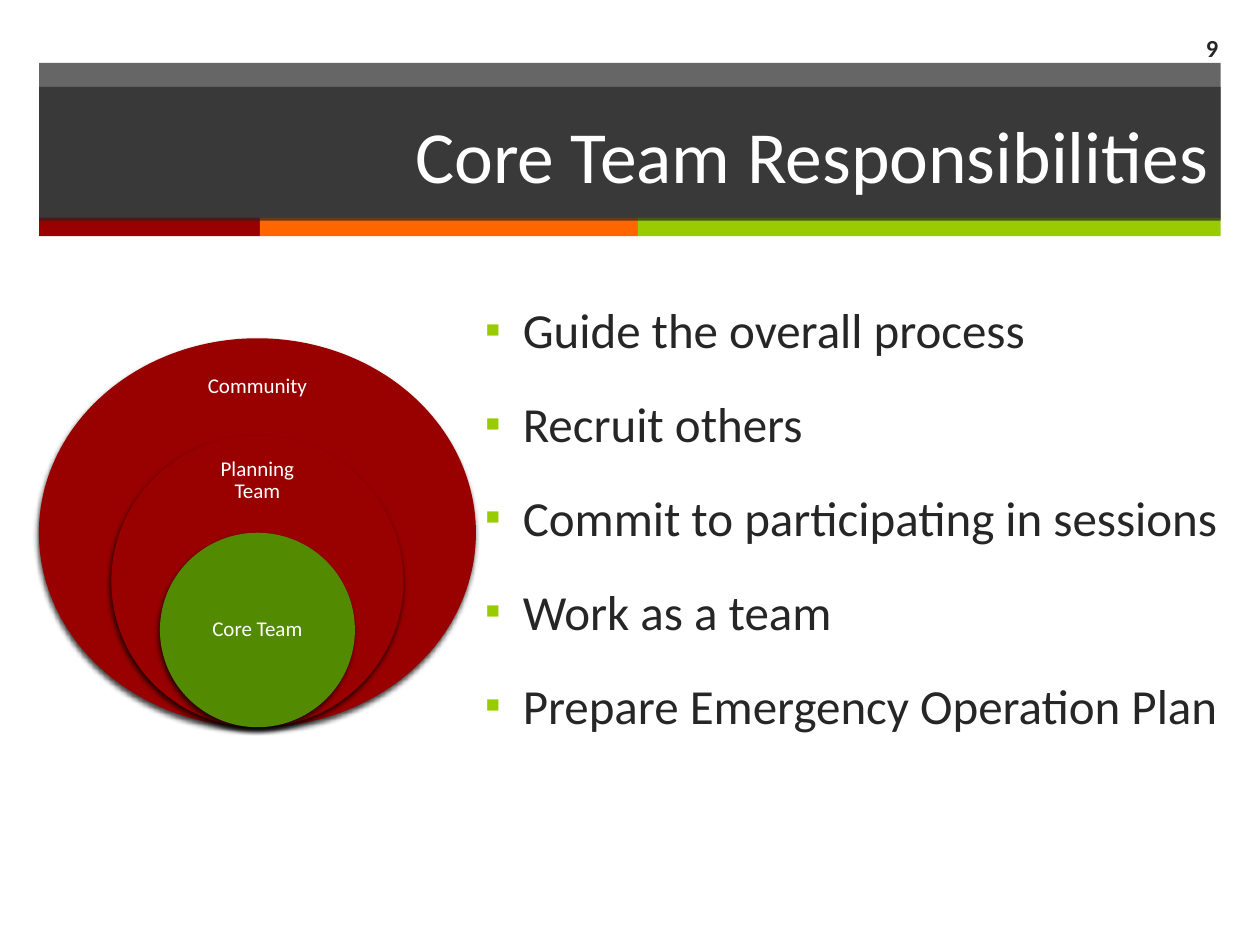
from lxml import etree
from pptx import Presentation
from pptx.dml.color import RGBColor
from pptx.enum.shapes import MSO_SHAPE
from pptx.enum.text import MSO_ANCHOR, PP_ALIGN
from pptx.oxml.ns import qn
from pptx.util import Cm, Pt

RECT, OVAL = MSO_SHAPE.RECTANGLE, MSO_SHAPE.OVAL
TOP, MID = MSO_ANCHOR.TOP, MSO_ANCHOR.MIDDLE
LEFT, MIDDLE, RIGHT = PP_ALIGN.LEFT, PP_ALIGN.CENTER, PP_ALIGN.RIGHT

DARK = RGBColor(0x26, 0x26, 0x26)
WHITE = RGBColor(0xFF, 0xFF, 0xFF)
RED = RGBColor(0x99, 0x00, 0x00)
ORANGE = RGBColor(0xFF, 0x66, 0x00)
LIME = RGBColor(0x99, 0xCC, 0x00)
GREEN = RGBColor(0x52, 0x8A, 0x02)
FONT = "Calibri"

TITLE = "Core Team Responsibilities"
NUMBER = "9"
DUTIES = [
    "Guide the overall process",
    "Recruit others",
    "Commit to participating in sessions",
    "Work as a team",
    "Prepare Emergency Operation Plan",
]
STRIPES = [(RED, 4.45), (ORANGE, 7.62), (LIME, 11.75)]
RINGS = [
    ("Community", RED, 8.81, 4, 3.07, 7.8),
    ("Planning Team", RED, 5.89, 3, 2.74, 9.69),
    ("Core Team", GREEN, 3.93, 2, 2.77, 12.69),
]
EDGE, WIDE = 0.79, 23.82
AXIS, BASE, STEP = 5.19, 14.66, 1.96
LABEL = 1.2


def add(node, tag, **attrs):
    return etree.SubElement(node, qn(tag), attrs)


def draw(kind, x, y, w, h, color, alpha=None):
    shape = slide.shapes.add_shape(kind, Cm(x), Cm(y), Cm(w), Cm(h))
    shape.shadow.inherit = False
    shape.fill.solid()
    shape.fill.fore_color.rgb = color
    shape.line.fill.background()
    if alpha:
        tint = shape.fill._xPr.find(qn("a:solidFill"))[0]
        add(tint, "a:alpha", val=str(alpha * 1000))
    return shape


def shade(shape):
    effect = shape._element.spPr.find(qn("a:effectLst"))
    cast = add(effect, "a:outerShdw", blurRad=str(Pt(3)), dist=str(Pt(2)),
               dir=str(110 * 60000), algn="ctr", rotWithShape="0")
    tint = add(cast, "a:srgbClr", val="000000")
    add(tint, "a:alpha", val="75000")


def write(shape, lines, size, color, align, anchor, bold=False):
    frame = shape.text_frame
    frame.word_wrap = True
    frame.vertical_anchor = anchor
    for i, line in enumerate(lines):
        para = frame.paragraphs[0] if i == 0 else frame.add_paragraph()
        para.alignment = align
        run = para.add_run()
        run.text = line
        font = run.font
        font.name, font.size, font.bold = FONT, Pt(size), bold
        font.color.rgb = color
    return frame


def box(x, y, w, h):
    return slide.shapes.add_textbox(Cm(x), Cm(y), Cm(w), Cm(h))


def mark(para):
    props = para._p.get_or_add_pPr()
    props.set("marL", str(Cm(1.27)))
    props.set("indent", str(Cm(-0.76)))
    tint = add(props, "a:buClr")
    add(tint, "a:srgbClr", val=str(LIME))
    add(props, "a:buSzPct", val="90000")
    add(props, "a:buFont", typeface=FONT)
    add(props, "a:buChar", char="▪")


deck = Presentation()
deck.slide_width, deck.slide_height = Cm(25.4), Cm(19.05)
slide = deck.slides.add_slide(deck.slide_layouts[6])

draw(RECT, EDGE, 1.27, WIDE, 3.15, DARK, 70)
x = EDGE
for color, w in STRIPES:
    draw(RECT, x, 4.39, w, 0.37, color)
    x += w
head = draw(RECT, EDGE, 1.75, WIDE, 2.7, DARK, 70)
write(head, [TITLE], 42, WHITE, RIGHT, MID)

body = write(box(9.02, 5.92, 15.95, 12.55), DUTIES, 28, DARK, LEFT, TOP)
for i, para in enumerate(body.paragraphs):
    para.space_before = Pt(20 if i else 0)
    mark(para)

for name, color, w, steps, span, mid in RINGS:
    h = steps * STEP
    shade(draw(OVAL, AXIS - w / 2, BASE - h, w, h, color))
    label = box(AXIS - span / 2, mid - LABEL / 2, span, LABEL)
    frame = write(label, [name], 12, WHITE, MIDDLE, MID)
    frame.margin_left = frame.margin_right = Cm(0.23)
    frame.paragraphs[0].line_spacing = 0.9

write(box(23.06, 0.46, 1.75, 0.99), [NUMBER], 14, DARK, RIGHT, MID, True)

deck.save("out.pptx")
